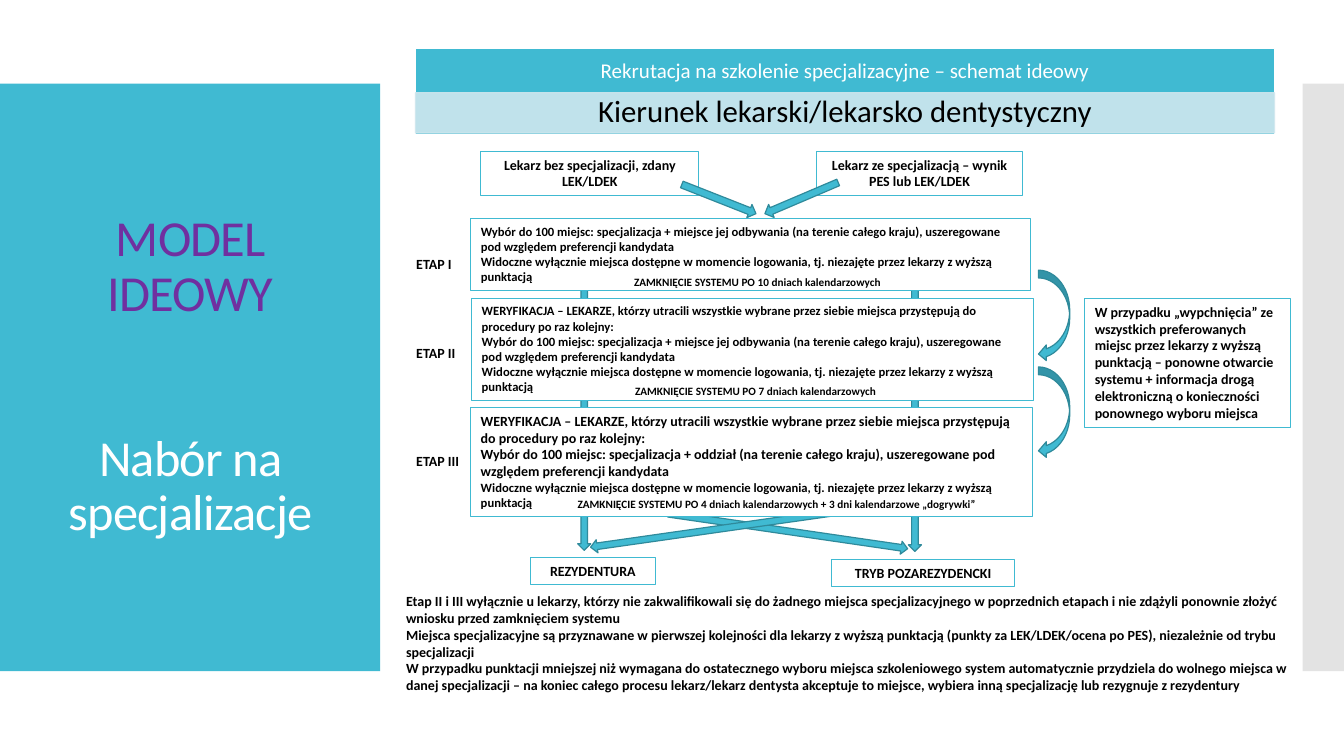
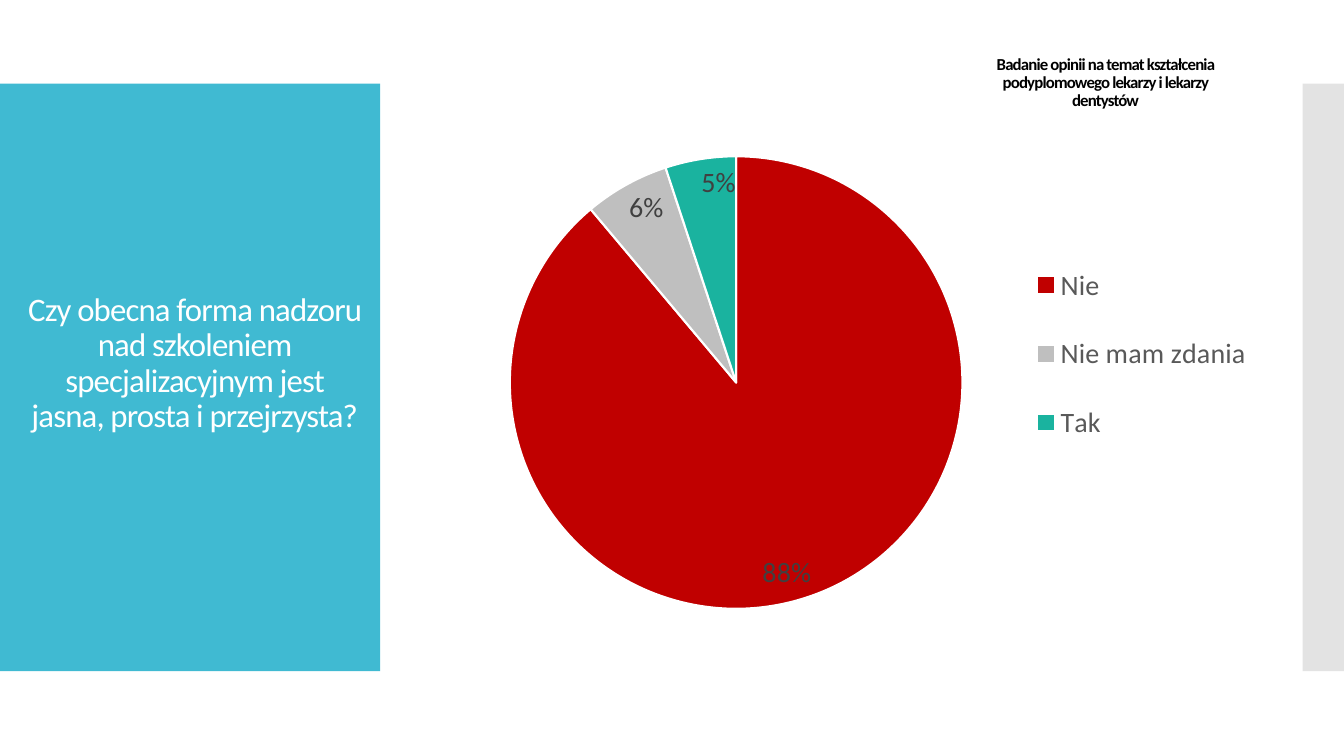
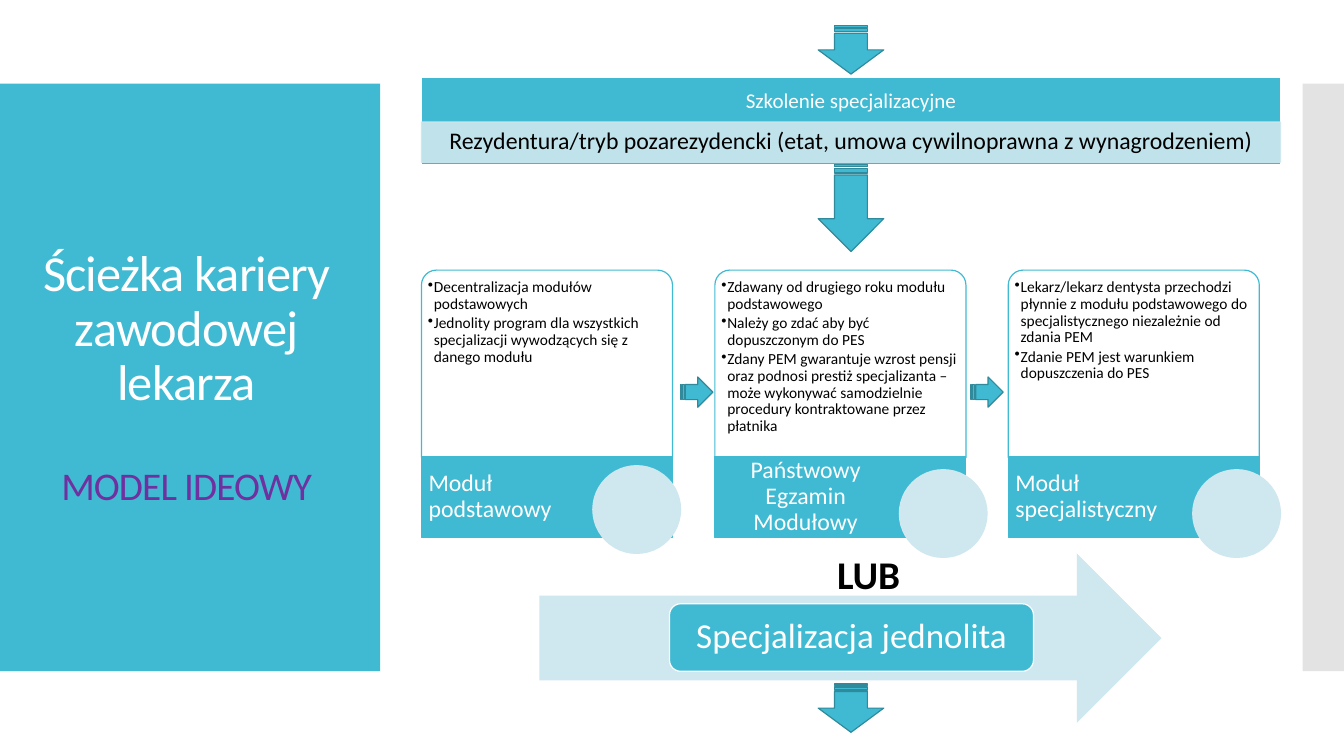
"""Three slides on specialist training for doctors: recruitment, a survey chart and a career path."""
import lxml.etree
import pptx
import pptx.chart.data
import pptx.dml.color
import pptx.enum.chart
import pptx.enum.shapes
import pptx.enum.text
import pptx.oxml.ns
import pptx.util

Inches, Pt = pptx.util.Inches, pptx.util.Pt
qn = pptx.oxml.ns.qn
SHAPE = pptx.enum.shapes.MSO_SHAPE
ALIGN = pptx.enum.text.PP_ALIGN
ANCHOR = pptx.enum.text.MSO_ANCHOR

FONT = "Calibri"
TEAL, DARK_TEAL, PALE, GREY = "40BAD2", "2F8A9B", "CFE7EE", "C8C8C8"
WHITE, BLACK, PURPLE = "FFFFFF", "000000", "7030A0"
THIN, REGULAR = 0.75, 0.85

PANELS = [((0, 0.83, 3.77, 5.83), TEAL, None), ((12.92, 0.83, 0.42, 5.83), GREY, 50)]
TITLE = {"size": 36, "color": WHITE, "align": ALIGN.CENTER, "anchor": ANCHOR.MIDDLE,
         "spacing": 0.9, "tracking": -60}
BAND_TEXT = {"align": ALIGN.CENTER, "anchor": ANCHOR.MIDDLE, "spacing": 0.9}
SMALL_BOLD = {"size": 10, "bold": True}
CENTERED_BOLD = {**SMALL_BOLD, "align": ALIGN.CENTER}
FILLED = {"fill": TEAL, "line": DARK_TEAL}

CHOICE = ("Wybór do 100 miejsc: specjalizacja + {} (na terenie całego kraju), "
          "uszeregowane pod względem preferencji kandydata")
PLACE_CHOICE = CHOICE.format("miejsce jej odbywania")
WARD_CHOICE = CHOICE.format("oddział")
VISIBLE = ("Widoczne wyłącznie miejsca dostępne w momencie logowania, "
           "tj. niezajęte przez lekarzy z wyższą punktacją")
VERIFICATION = ("WERYFIKACJA – LEKARZE, którzy utracili wszystkie wybrane przez siebie "
                "miejsca przystępują do procedury po raz kolejny:")
CLOSING = "ZAMKNIĘCIE SYSTEMU PO {}"

RECRUITMENT_TITLE = [("MODEL IDEOWY", {"color": PURPLE}),
                     ("Nabór na specjalizacje", {"before": 79})]
FLOW_ARROWS = [
    ((7.75, 4.07, 0.13, 2.4), 278.3),
    ((9.01, 2.4, 0.13, 3.07), 0),
    ((5.73, 2.39, 0.13, 3.07), 0),
    ((6.98, 4.06, 0.13, 2.4), 81.9),
]
ENTRY_ARROWS = [((7.88, 1.57, 0.14, 0.79), 66.9), ((7.06, 1.58, 0.14, 0.79), 291.5)]
RETURN_ARROWS = [(10.3, 2.68, 0.31, 0.91), (10.3, 3.64, 0.31, 0.91)]
FLOW_BOXES = [
    ((4.77, 1.5, 2.16, 0.44), "Lekarz bez specjalizacji, zdany LEK/LDEK"),
    ((8.1, 1.5, 2.04, 0.44), "Lekarz ze specjalizacją – wynik PES lub LEK/LDEK"),
    ((5.26, 5.53, 1.24, 0.27), "REZYDENTURA"),
    ((8.25, 5.55, 1.81, 0.27), "TRYB POZAREZYDENCKI"),
]
STAGES = [
    ("ETAP I", 2.49, (4.67, 2.17, 5.55, 0.71), 9, [PLACE_CHOICE, VISIBLE],
     (6.19, 2.68, 3.01, 0.24), "10 dniach kalendarzowych"),
    ("ETAP II", 3.37, (4.68, 2.96, 5.57, 1.01), 9, [VERIFICATION, PLACE_CHOICE, VISIBLE],
     (6.2, 3.76, 3.69, 0.24), "7 dniach kalendarzowych"),
    ("ETAP III", 4.44, (4.67, 4.04, 5.57, 1.08), 10,
     [VERIFICATION, WARD_CHOICE, (VISIBLE, {"size": 9})],
     (5.63, 4.88, 4.51, 0.24), "4 dniach kalendarzowych + 3 dni kalendarzowe „dogrywki”"),
]
REOPENING = ("W przypadku „wypchnięcia” ze wszystkich preferowanych miejsc przez lekarzy z wyższą "
             "punktacją – ponowne otwarcie systemu + informacja drogą elektroniczną "
             "o konieczności ponownego wyboru miejsca")
RULES = [
    "Etap II i III wyłącznie u lekarzy, którzy nie zakwalifikowali się do żadnego miejsca "
    "specjalizacyjnego w poprzednich etapach i nie zdążyli ponownie złożyć wniosku przed "
    "zamknięciem systemu",
    "Miejsca specjalizacyjne są przyznawane w pierwszej kolejności dla lekarzy z wyższą punktacją "
    "(punkty za LEK/LDEK/ocena po PES), niezależnie od trybu specjalizacji",
    "W przypadku punktacji mniejszej niż wymagana do ostatecznego wyboru miejsca szkoleniowego "
    "system automatycznie przydziela do wolnego miejsca w danej specjalizacji – na koniec całego "
    "procesu lekarz/lekarz dentysta akceptuje to miejsce, wybiera inną specjalizację lub rezygnuje "
    "z rezydentury",
]

QUESTION = "Czy obecna forma nadzoru nad szkoleniem specjalizacyjnym jest jasna, prosta i przejrzysta?"
SURVEY = "Badanie opinii na temat kształcenia podyplomowego lekarzy i lekarzy dentystów"
ANSWERS = [("Nie", 88, "C00000"), ("Nie mam zdania", 6, "BFBFBF"), ("Tak", 5, "1AB39F")]

CAREER_TITLE = ["Ścieżka kariery zawodowej lekarza",
                ("MODEL IDEOWY", {"size": 28, "color": PURPLE, "before": 39})]
STEP_ARROWS = [
    ((8.2, 0.17, 0.48, 0.65), 90),
    ((8.01, 1.74, 0.86, 0.65), 90),
    ((6.75, 3.74, 0.32, 0.3), 0),
    ((9.63, 3.74, 0.32, 0.3), 0),
    ((8.2, 6.7, 0.48, 0.65), 90),
]
MODULES = [
    ("Moduł podstawowy", ALIGN.LEFT, (1.7, 4.62),
     ["Decentralizacja modułów podstawowych",
      "Jednolity program dla wszystkich specjalizacji wywodzących się z danego modułu"]),
    ("Państwowy Egzamin Modułowy", ALIGN.CENTER, (1.83, 4.66),
     ["Zdawany od drugiego roku modułu podstawowego",
      "Należy go zdać aby być dopuszczonym do PES",
      "Zdany PEM gwarantuje wzrost pensji oraz podnosi prestiż specjalizanta – może wykonywać "
      "samodzielnie procedury kontraktowane przez płatnika"]),
    ("Moduł specjalistyczny", ALIGN.LEFT, (1.83, 4.66),
     ["Lekarz/lekarz dentysta przechodzi płynnie z modułu podstawowego do specjalistycznego "
      "niezależnie od zdania PEM",
      "Zdanie PEM jest warunkiem dopuszczenia do PES"]),
]


def rgb(value):
    return pptx.dml.color.RGBColor.from_string(value)


def apply(target, values):
    for name, value in values.items():
        setattr(target, name, value)


def style_font(font, size, color, bold=False):
    apply(font, {"name": FONT, "size": Pt(size), "bold": bold})
    font.color.rgb = rgb(color)


def add_bullet(paragraph):
    properties = paragraph._p.get_or_add_pPr()
    apply_indent = {"marL": Inches(0.06), "indent": Inches(-0.06)}
    for name, value in apply_indent.items():
        properties.set(name, str(int(value)))
    lxml.etree.SubElement(properties, qn("a:buChar")).set("char", "•")


def write(shape, paragraphs, anchor=ANCHOR.TOP, inset=(0.1, 0.05, 0.1, 0.05), **text_format):
    frame = shape.text_frame
    left, top, right, bottom = map(Inches, inset)
    apply(frame, {"word_wrap": True, "vertical_anchor": anchor, "margin_left": left,
                  "margin_top": top, "margin_right": right, "margin_bottom": bottom})
    for index, entry in enumerate([paragraphs] if isinstance(paragraphs, str) else paragraphs):
        text, changes = (entry, {}) if isinstance(entry, str) else entry
        values = {"color": BLACK, **text_format, **changes}
        paragraph = frame.add_paragraph() if index else frame.paragraphs[0]
        apply(paragraph, {"alignment": values.get("align", ALIGN.LEFT),
                          "line_spacing": values.get("spacing", 1.0),
                          "space_before": Pt(values.get("before", 0)),
                          "space_after": Pt(values.get("after", 0))})
        if values.get("bullet"):
            add_bullet(paragraph)
        run = paragraph.add_run()
        run.text = text
        style_font(run.font, values["size"], values["color"], values.get("bold", False))
        if "tracking" in values:
            run.font._element.set("spc", str(values["tracking"]))


def add_text(slide, box, paragraphs, **text_format):
    write(slide.shapes.add_textbox(*map(Inches, box)), paragraphs, **text_format)


def add_shape(slide, kind, box, fill=None, line=None, width=REGULAR, rotation=0, opacity=None):
    shape = slide.shapes.add_shape(kind, *map(Inches, box))
    shape.shadow.inherit = False
    shape.rotation = rotation
    for part, color in ((shape.fill, fill), (shape.line.fill, line)):
        if color:
            part.solid()
            part.fore_color.rgb = rgb(color)
        else:
            part.background()
    if line:
        shape.line.width = Pt(width)
    if opacity:
        for color in shape.element.spPr.iter(qn("a:srgbClr")):
            lxml.etree.SubElement(color, qn("a:alpha")).set("val", str(opacity * 1000))
    return shape


def add_box(slide, box, paragraphs, fill=None, **text_format):
    write(add_shape(slide, SHAPE.RECTANGLE, box, fill, TEAL, THIN), paragraphs, **text_format)


def add_arrows(slide, kind, arrows):
    for box, rotation in arrows:
        add_shape(slide, kind, box, rotation=rotation, **FILLED)


def add_band(slide, left, top, heading, subject, subject_size):
    band = add_shape(slide, SHAPE.RECTANGLE, (left, top, 8.52, 0.86), TEAL, WHITE)
    write(band, heading, size=15, color=WHITE, inset=(0.12, 0, 0.12, 0.39), **BAND_TEXT)
    strip = add_shape(slide, SHAPE.RECTANGLE, (left, top + 0.44, 8.52, 0.4), PALE, PALE, opacity=90)
    write(strip, subject, size=subject_size, inset=(0.13, 0.02, 0.13, 0.02), **BAND_TEXT)


def prepare_layout(presentation, slide):
    layout = slide.slide_layout
    for placeholder in list(layout.placeholders):
        placeholder.element.getparent().remove(placeholder.element)
    for box, color, opacity in PANELS:
        panel = add_shape(slide, SHAPE.RECTANGLE, box, color, opacity=opacity)
        layout.shapes.element.append(panel.element)


def manual_layout(left, top, width, height, inner=False):
    layout = lxml.etree.Element(qn("c:layout"))
    manual = lxml.etree.SubElement(layout, qn("c:manualLayout"))
    values = [("layoutTarget", "inner")] if inner else []
    values += [("xMode", "edge"), ("yMode", "edge"), ("x", left), ("y", top),
               ("w", width), ("h", height)]
    for name, value in values:
        lxml.etree.SubElement(manual, qn("c:" + name)).set("val", str(value))
    return layout


def build_recruitment(slide):
    add_band(slide, 4.12, 0.48, "Rekrutacja na szkolenie specjalizacyjne – schemat ideowy",
             "Kierunek lekarski/lekarsko dentystyczny", 22)
    add_arrows(slide, SHAPE.DOWN_ARROW, FLOW_ARROWS)
    for box, text in FLOW_BOXES:
        add_box(slide, box, text, **CENTERED_BOLD)
    for label, label_top, box, size, paragraphs, closing_box, closing in STAGES:
        add_box(slide, box, paragraphs, WHITE, size=size, bold=True)
        add_text(slide, closing_box, CLOSING.format(closing), size=8, bold=True)
        add_text(slide, (4.03, label_top, 1.57, 0.27), label, **SMALL_BOLD)
    add_box(slide, (10.76, 2.96, 2.04, 1.28), REOPENING, **SMALL_BOLD)
    add_arrows(slide, SHAPE.CURVED_LEFT_ARROW, [(box, 0) for box in RETURN_ARROWS])
    add_arrows(slide, SHAPE.DOWN_ARROW, ENTRY_ARROWS)
    add_text(slide, (3.93, 5.83, 8.96, 1.11), RULES, **SMALL_BOLD)
    add_text(slide, (0.28, 1.23, 3.22, 5.03), RECRUITMENT_TITLE, **TITLE)


def build_survey(slide):
    add_text(slide, (0.17, 1.11, 3.52, 5), QUESTION, **{**TITLE, "size": 23.4})
    data = pptx.chart.data.CategoryChartData(number_format='0"%"')
    data.categories = [name for name, value, color in ANSWERS]
    data.add_series("Series 1", [value for name, value, color in ANSWERS])
    chart = slide.shapes.add_chart(pptx.enum.chart.XL_CHART_TYPE.PIE,
                                   *map(Inches, (4.21, 1.03, 8.47, 5.17)), data).chart
    apply(chart, {"has_title": False, "has_legend": True})
    style_font(chart.font, 10, BLACK)
    apply(chart.legend, {"position": pptx.enum.chart.XL_LEGEND_POSITION.RIGHT,
                         "include_in_layout": False})
    style_font(chart.legend.font, 20, "595959")
    plot = chart.plots[0]
    apply(plot, {"vary_by_categories": True, "has_data_labels": True})
    apply(plot.data_labels, {"show_value": True, "show_percentage": False,
                             "number_format": '0"%"', "number_format_is_linked": False,
                             "position": pptx.enum.chart.XL_LABEL_POSITION.INSIDE_END})
    style_font(plot.data_labels.font, 20, "404040")
    for index, (name, value, color) in enumerate(ANSWERS):
        point = plot.series[0].points[index].format
        point.fill.solid()
        point.fill.fore_color.rgb = rgb(color)
        point.line.color.rgb = rgb(WHITE)
        point.line.width = Pt(1.5)
    plot_area = chart.element.find(".//" + qn("c:plotArea"))
    for layout in plot_area.findall(qn("c:layout")):
        plot_area.remove(layout)
    plot_area.insert(0, manual_layout(0.1, 0.1, 0.53, 0.87, inner=True))
    legend_position = chart.element.find(".//" + qn("c:legendPos"))
    legend_position.addnext(manual_layout(0.7, 0.25, 0.28, 0.46))
    add_text(slide, (9.53, 0.2, 2.87, 1.25), SURVEY,
             **{**TITLE, "size": 12, "color": BLACK, "bold": True})


def build_career(slide):
    add_band(slide, 4.18, 0.77, "Szkolenie specjalizacyjne",
             "Rezydentura/tryb pozarezydencki (etat, umowa cywilnoprawna z wynagrodzeniem)", 17)
    for index, (name, align, (circle_offset, circle_top), points) in enumerate(MODULES):
        left = 4.18 + 2.91 * index
        card = add_shape(slide, SHAPE.ROUND_2_SAME_RECTANGLE, (left, 2.68, 2.49, 1.86), WHITE, TEAL)
        card.adjustments[0] = 0.08
        write(card, points, size=11, inset=(0.02, 0.05, 0.02, 0.02), spacing=0.9, after=2,
              bullet=True)
        footer = add_shape(slide, SHAPE.RECTANGLE, (left, 4.53, 2.49, 0.8), TEAL, TEAL)
        write(footer, name, size=17, color=WHITE, inset=(0.07, 0, 0.76, 0),
              **{**BAND_TEXT, "align": align})
        add_shape(slide, SHAPE.OVAL, (left + circle_offset, circle_top, 0.87, 0.87), PALE, PALE)
    add_text(slide, (7.99, 5.41, 1.25, 0.59), "LUB", **{**CENTERED_BOLD, "size": 28})
    add_shape(slide, SHAPE.RIGHT_ARROW, (5.35, 5.49, 6.17, 1.68), PALE)
    button = add_shape(slide, SHAPE.ROUNDED_RECTANGLE, (6.64, 5.99, 3.61, 0.67), TEAL, WHITE)
    write(button, "Specjalizacja jednolita", size=25, color=WHITE, **BAND_TEXT)
    add_arrows(slide, SHAPE.STRIPED_RIGHT_ARROW, STEP_ARROWS)
    add_text(slide, (0.24, 1.24, 3.22, 5.03), CAREER_TITLE, **TITLE)


def main():
    presentation = pptx.Presentation()
    apply(presentation, {"slide_width": Inches(13.33), "slide_height": Inches(7.5)})
    blank = presentation.slide_layouts[6]
    for index, build in enumerate((build_recruitment, build_survey, build_career)):
        slide = presentation.slides.add_slide(blank)
        if index == 0:
            prepare_layout(presentation, slide)
        build(slide)
    presentation.save("out.pptx")


if __name__ == "__main__":
    main()
